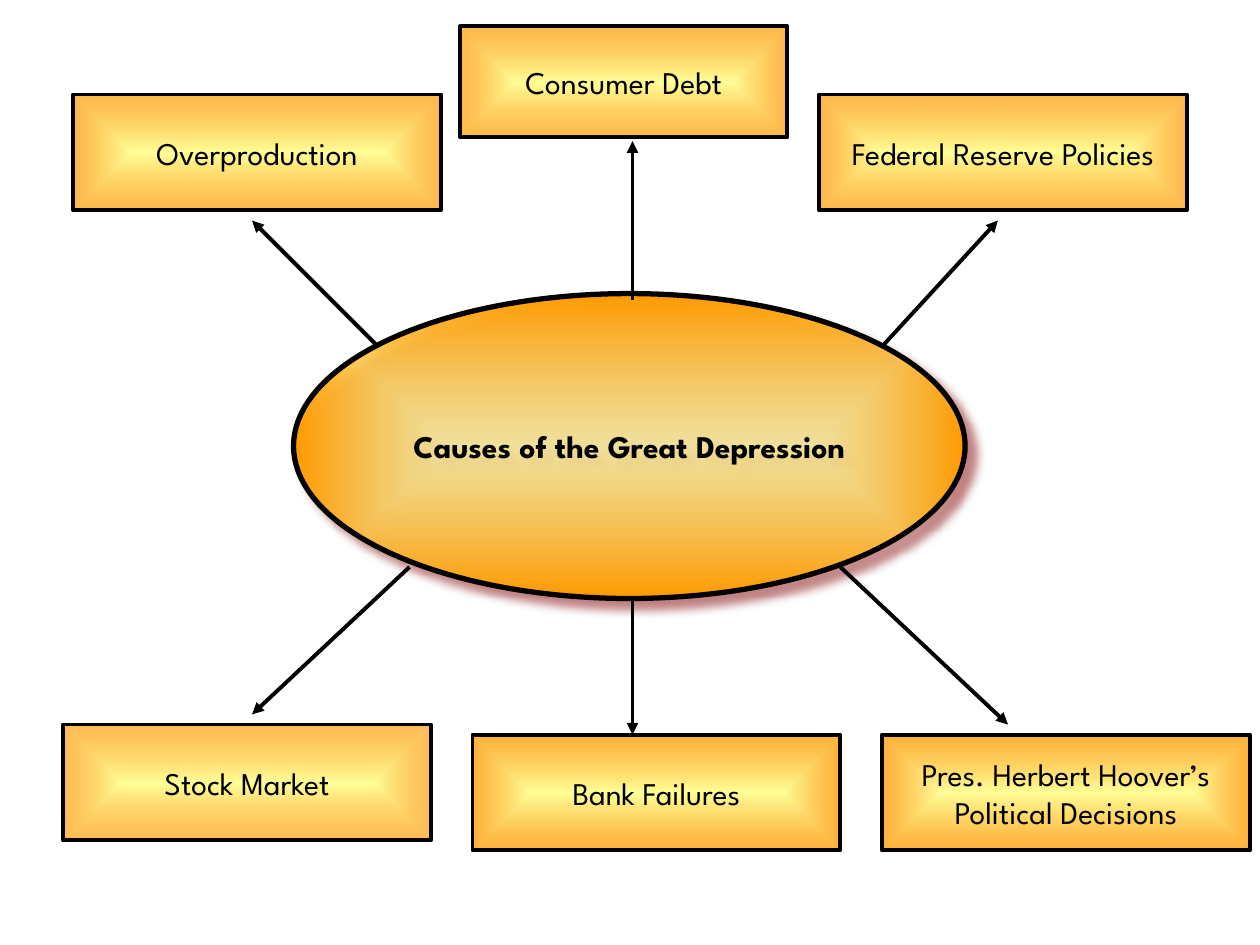
from pptx import Presentation
from pptx.dml.color import RGBColor
from pptx.enum.shapes import MSO_CONNECTOR, MSO_SHAPE
from pptx.enum.text import MSO_ANCHOR, PP_ALIGN
from pptx.oxml import parse_xml
from pptx.oxml.ns import nsdecls
from pptx.util import Inches, Pt

THEME = {
    "font": "League Spartan", "size": 18, "ink": "000000",
    "center": "FFFF99", "edge": "FF9900", "shadow": "800000",
    "thin": 2.25, "thick": 3,
}

# Content: lines of text, left, top, width, height, opacity of the edge colour
TOPIC = (["Causes of the Great Depression"], 2.33, 2.33, 5.33, 2.42)
WIDE = (2.92, 0.92)
CAUSES = [
    (["Overproduction"], 0.58, 0.75, *WIDE, 70),
    (["Consumer Debt"], 3.65, 0.21, 2.6, 0.88, 70),
    (["Federal Reserve Policies"], 6.5, 0.75, *WIDE, 70),
    (["Stock Market"], 0.5, 5.75, *WIDE, 66),
    (["Bank Failures"], 3.75, 5.83, *WIDE, 77),
    (["Pres. Herbert Hoover’s", "Political Decisions"], 7, 5.83, *WIDE, 77),
]
# Arrows from the topic towards each cause
ARROWS = [
    ((3, 2.75), (2, 1.75)),
    ((5.02, 2.38), (5.02, 1.12)),
    ((7, 2.75), (7.92, 1.75)),
    ((3.25, 4.5), (2, 5.67)),
    ((5.02, 4.75), (5.02, 5.83)),
    ((6.67, 4.5), (8, 5.75)),
]


def color_xml(color, opacity):
    return f'<a:srgbClr val="{color}"><a:alpha val="{opacity * 1000}"/></a:srgbClr>'


def fill_from_center(shape, center_opacity, edge_opacity):
    shape.fill.background()
    properties = shape._element.spPr
    gradient = parse_xml(
        f'<a:gradFill {nsdecls("a")} rotWithShape="1"><a:gsLst>'
        f'<a:gs pos="0">{color_xml(THEME["center"], center_opacity)}</a:gs>'
        f'<a:gs pos="100000">{color_xml(THEME["edge"], edge_opacity)}</a:gs>'
        '</a:gsLst><a:path path="shape">'
        '<a:fillToRect l="50000" t="50000" r="50000" b="50000"/>'
        '</a:path></a:gradFill>')
    properties.replace(properties.find("{*}noFill"), gradient)


def style_line(line, width):
    line.color.rgb = RGBColor.from_string(THEME["ink"])
    line.width = Pt(width)


def add_node(page, kind, lines, left, top, width, height, line_width,
             center_opacity=100, edge_opacity=100, bold=False):
    shape = page.shapes.add_shape(
        kind, Inches(left), Inches(top), Inches(width), Inches(height))
    shape.shadow.inherit = False
    fill_from_center(shape, center_opacity, edge_opacity)
    style_line(shape.line, line_width)
    frame = shape.text_frame
    frame.word_wrap = False
    frame.vertical_anchor = MSO_ANCHOR.MIDDLE
    frame.text = "\n".join(lines)
    for para in frame.paragraphs:
        para.alignment = PP_ALIGN.CENTER
        para.font.name = THEME["font"]
        para.font.size = Pt(THEME["size"])
        para.font.bold = bold
        para.font.color.rgb = RGBColor.from_string(THEME["ink"])
    return shape


def add_shadow(shape):
    shape._element.spPr.find("{*}effectLst").append(parse_xml(
        f'<a:outerShdw {nsdecls("a")} blurRad="{Pt(5)}" dist="{Pt(7.1)}" '
        f'dir="2700000" algn="ctr" rotWithShape="0">'
        f'{color_xml(THEME["shadow"], 50)}</a:outerShdw>'))


def add_arrow(page, start, end):
    arrow = page.shapes.add_connector(
        MSO_CONNECTOR.STRAIGHT, *map(Inches, start + end))
    style_line(arrow.line, THEME["thin"])
    arrow.line._get_or_add_ln().append(
        parse_xml(f'<a:tailEnd {nsdecls("a")} type="triangle"/>'))
    arrow._element.spPr.append(parse_xml(f'<a:effectLst {nsdecls("a")}/>'))


def main():
    deck = Presentation()
    deck.slide_width, deck.slide_height = Inches(10), Inches(7.5)
    page = deck.slides.add_slide(deck.slide_layouts[6])

    # Central topic
    topic = add_node(page, MSO_SHAPE.OVAL, *TOPIC, THEME["thick"],
                     center_opacity=65, bold=True)
    add_shadow(topic)

    # Arrows and the causes around the topic
    for start, end in ARROWS:
        add_arrow(page, start, end)
    for *place, opacity in CAUSES:
        add_node(page, MSO_SHAPE.RECTANGLE, *place, THEME["thin"],
                 edge_opacity=opacity)

    deck.save("out.pptx")


if __name__ == "__main__":
    main()
